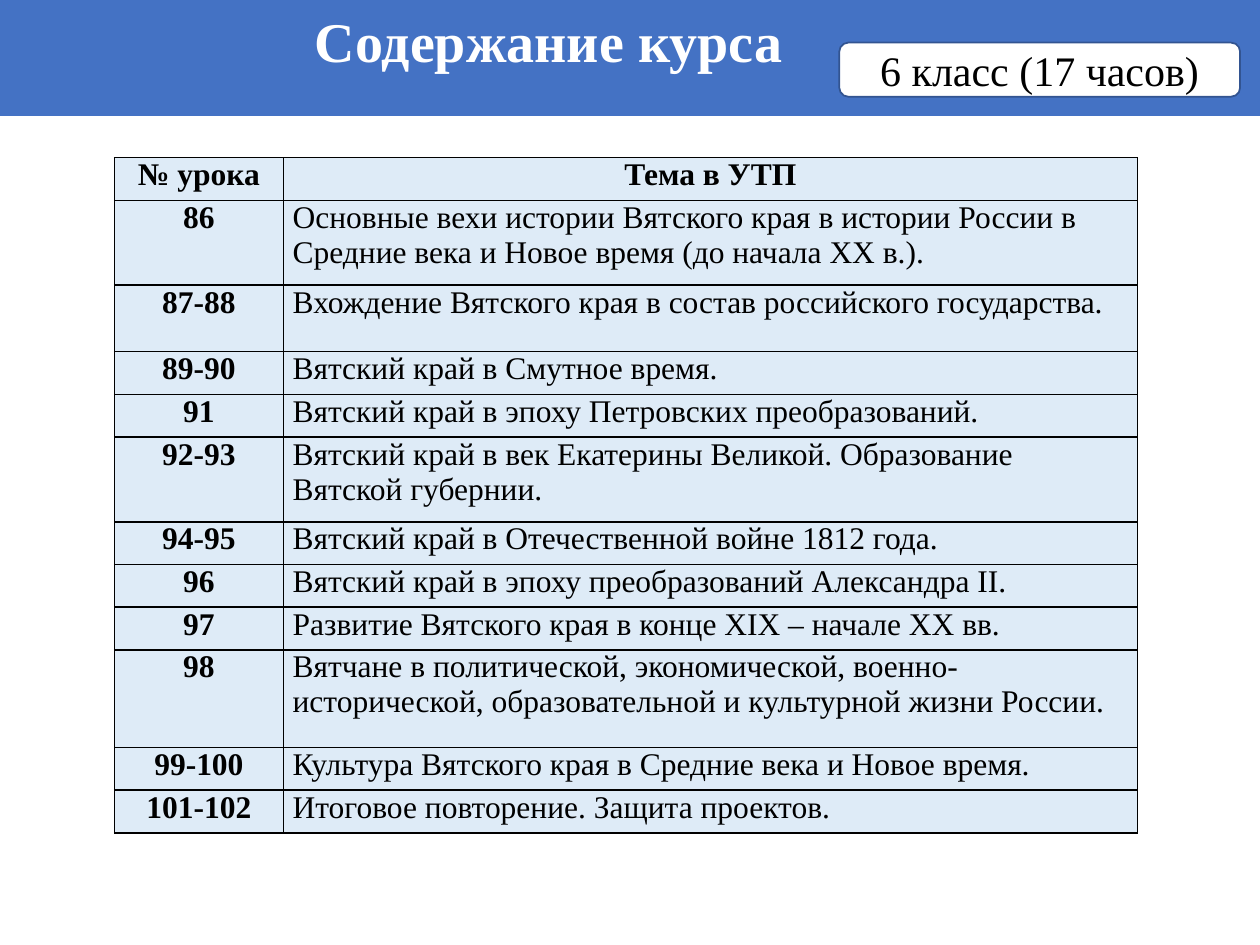
from lxml.etree import SubElement
from pptx import Presentation
from pptx.dml.color import RGBColor
from pptx.enum.shapes import MSO_SHAPE
from pptx.enum.text import MSO_ANCHOR, PP_ALIGN
from pptx.oxml.ns import qn
from pptx.util import Cm, Pt

FONT = "Times New Roman"
BLUE = RGBColor(0x44, 0x72, 0xC4)
DARK_BLUE = RGBColor(0x32, 0x54, 0x91)
PALE_BLUE = RGBColor(0xDE, 0xEB, 0xF7)
WHITE = RGBColor(0xFF, 0xFF, 0xFF)
BLACK = RGBColor(0, 0, 0)

COLUMN_WIDTHS = (3.4, 17.22)
LESSONS = [
    ("№ урока", "Тема в УТП", 0.86),
    ("86", "Основные вехи истории Вятского края в истории России в Средние века "
           "и Новое время (до начала XX в.).", 1.71),
    ("87-88", "Вхождение Вятского края в состав российского государства.", 1.34),
    ("89-90", "Вятский край в Смутное время.", 0.86),
    ("91", "Вятский край в эпоху Петровских преобразований.", 0.86),
    ("92-93", "Вятский край в век Екатерины Великой. Образование Вятской губернии.", 1.71),
    ("94-95", "Вятский край в Отечественной войне 1812 года.", 0.86),
    ("96", "Вятский край в эпоху преобразований Александра II.", 0.86),
    ("97", "Развитие Вятского края в конце XIX – начале XX вв.", 0.86),
    ("98", "Вятчане в политической, экономической, военно-исторической, "
           "образовательной и культурной жизни России.", 1.97),
    ("99-100", "Культура Вятского края в Средние века и Новое время.", 0.86),
    ("101-102", "Итоговое повторение. Защита проектов.", 0.86),
]


def set_text(tf, text, size, color=BLACK, bold=False, align=PP_ALIGN.CENTER):
    """Write one formatted paragraph into a text frame."""
    tf.text = text
    p = tf.paragraphs[0]
    p.alignment = align
    p.font.name = FONT
    p.font.size = Pt(size)
    p.font.bold = bold
    p.font.color.rgb = color


def add_box(s, kind, left, top, width, height, fill, line=None):
    """Add a filled shape without shadow, outlined only if a line colour is given."""
    sp = s.shapes.add_shape(kind, Cm(left), Cm(top), Cm(width), Cm(height))
    sp.shadow.inherit = False
    sp.fill.solid()
    sp.fill.fore_color.rgb = fill
    if line is None:
        sp.line.fill.background()
    else:
        sp.line.color.rgb = line
        sp.line.width = Pt(1)
    return sp


def set_title(s, text):
    """Place and format the slide title."""
    title = s.shapes.title
    title.left, title.top = Cm(-0.43), Cm(0)
    title.width, title.height = Cm(22.99), Cm(1.63)
    title.text_frame.vertical_anchor = MSO_ANCHOR.TOP
    set_text(title.text_frame, text, 32, WHITE, bold=True)
    return title


def set_borders(cell):
    """Draw a thin black line on all four sides of a cell."""
    tc_pr = cell._tc.get_or_add_tcPr()
    for i, side in enumerate(("a:lnL", "a:lnR", "a:lnT", "a:lnB")):
        ln = SubElement(tc_pr, qn(side), w=str(Pt(1)))
        fill = SubElement(ln, qn("a:solidFill"))
        SubElement(fill, qn("a:srgbClr"), val=str(BLACK))
        tc_pr.insert(i, ln)


def fill_cell(cell, text, bold, align):
    """Format a table cell and write its text."""
    cell.margin_left = cell.margin_right = Cm(0.19)
    cell.margin_top = cell.margin_bottom = 0
    cell.fill.solid()
    cell.fill.fore_color.rgb = PALE_BLUE
    set_borders(cell)
    set_text(cell.text_frame, text, 18, bold=bold, align=align)


def add_lesson_table(s):
    """Add the table of lesson numbers and topics."""
    heights = [height for _, _, height in LESSONS]
    table = s.shapes.add_table(len(LESSONS), len(COLUMN_WIDTHS), Cm(2.31), Cm(3.18),
                               Cm(sum(COLUMN_WIDTHS)), Cm(sum(heights))).table
    for column, width in zip(table.columns, COLUMN_WIDTHS):
        column.width = Cm(width)
    for i, (number, topic, height) in enumerate(LESSONS):
        table.rows[i].height = Cm(height)
        header = i == 0
        fill_cell(table.cell(i, 0), number, True, PP_ALIGN.CENTER)
        fill_cell(table.cell(i, 1), topic, header,
                  PP_ALIGN.CENTER if header else PP_ALIGN.LEFT)


def main():
    """Build the course content slide."""
    prs = Presentation()
    prs.slide_width, prs.slide_height = Cm(25.4), Cm(19.05)
    s = prs.slides.add_slide(prs.slide_layouts[5])
    title = set_title(s, "Содержание курса")
    band = add_box(s, MSO_SHAPE.RECTANGLE, 0, 0, 25.4, 2.34, BLUE)
    title.element.addprevious(band.element)
    badge = add_box(s, MSO_SHAPE.ROUNDED_RECTANGLE, 16.92, 0.86, 8.08, 1.09, WHITE, DARK_BLUE)
    badge.text_frame.vertical_anchor = MSO_ANCHOR.MIDDLE
    set_text(badge.text_frame, "6 класс (17 часов)", 24)
    add_lesson_table(s)
    prs.save("out.pptx")


if __name__ == "__main__":
    main()
